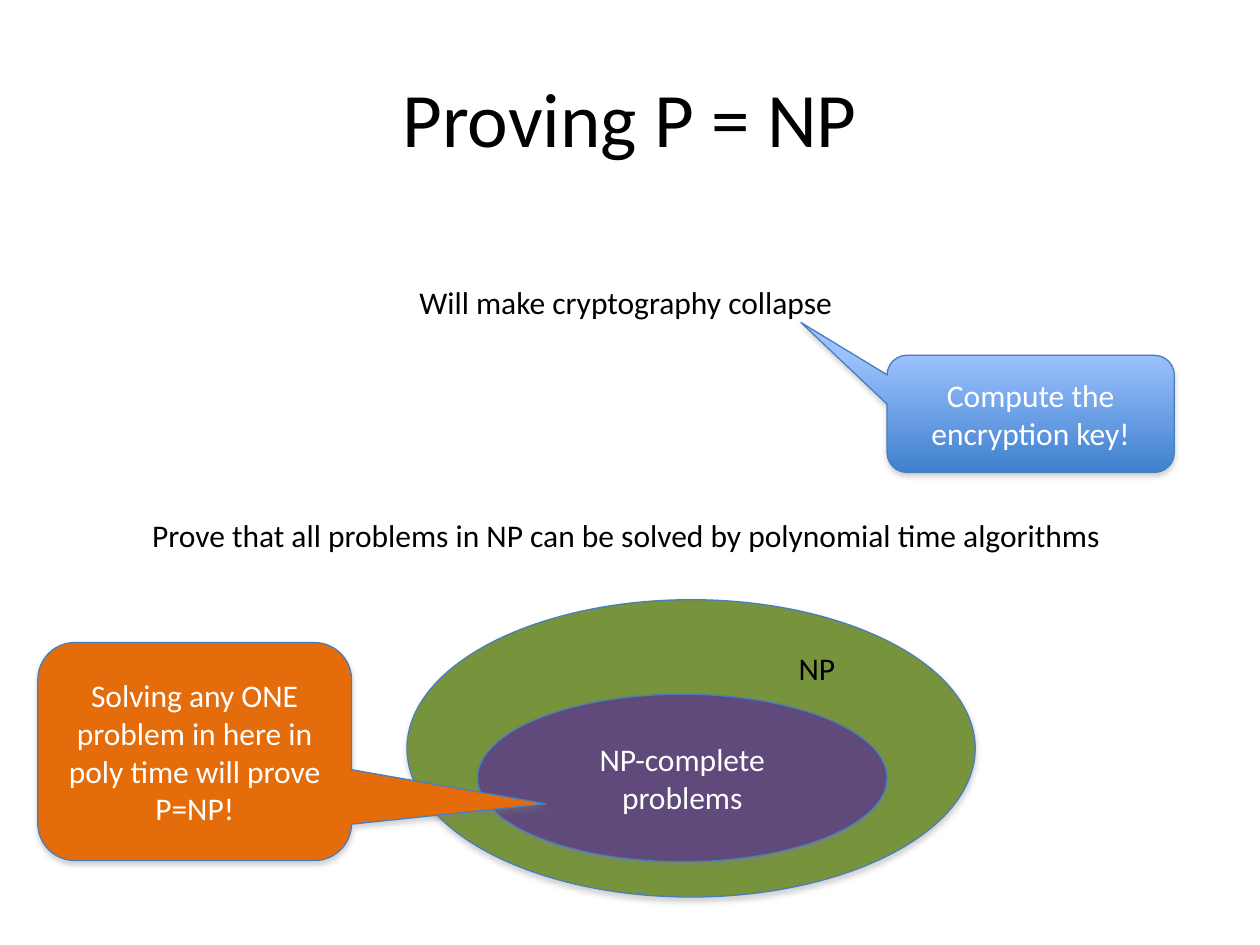
from lxml import etree
from pptx import Presentation
from pptx.dml.color import RGBColor
from pptx.enum.shapes import MSO_SHAPE
from pptx.enum.text import MSO_ANCHOR, MSO_AUTO_SIZE, PP_ALIGN
from pptx.oxml.ns import qn
from pptx.util import Inches, Pt

ELLIPSE = MSO_SHAPE.OVAL
CALLOUT = MSO_SHAPE.ROUNDED_RECTANGULAR_CALLOUT
MIDDLE = MSO_ANCHOR.MIDDLE
CENTER = PP_ALIGN.CENTER
FIT_SHAPE = MSO_AUTO_SIZE.SHAPE_TO_FIT_TEXT

FONT = "Calibri"
COLORS = {
    "text": "000000",
    "light": "FFFFFF",
    "outline": "4A7EBB",
    "shadow": "808080",
    "sky": "9BC1FF",
    "blue": "3F80CD",
    "np": "77933C",
    "np_complete": "604A7B",
    "orange": "E46C0A",
}


def rgb(name):
    return RGBColor.from_string(COLORS[name])


def write(frame, text, color, size=18):
    frame.text = text
    font = frame.paragraphs[0].runs[0].font
    font.name = FONT
    font.size = Pt(size)
    font.color.rgb = rgb(color)


def center(frame):
    frame.word_wrap = True
    frame.vertical_anchor = MIDDLE
    frame.paragraphs[0].alignment = CENTER


def add_title(shapes, text):
    title = shapes.add_textbox(Inches(0.5), Inches(0.3), Inches(9), Inches(1.25))
    write(title.text_frame, text, "text", 44)
    center(title.text_frame)


def add_label(shapes, text, left, top, width):
    label = shapes.add_textbox(Inches(left), Inches(top), Inches(width), Inches(0.4))
    label.text_frame.word_wrap = False
    label.text_frame.auto_size = FIT_SHAPE
    write(label.text_frame, text, "text")


def add_shadow(shape):
    shape.shadow.inherit = False
    effects = shape._element.spPr.find(qn("a:effectLst"))
    shadow = etree.SubElement(
        effects, qn("a:outerShdw"), blurRad=str(Pt(3.1)), dist=str(Pt(1.8)),
        dir=str(90 * 60000), rotWithShape="0")
    color = etree.SubElement(shadow, qn("a:srgbClr"), val=COLORS["shadow"])
    etree.SubElement(color, qn("a:alpha"), val="35000")


def add_figure(shapes, kind, box, fills, text=None, adjustments=()):
    figure = shapes.add_shape(kind, *map(Inches, box))
    for index, value in enumerate(adjustments):
        figure.adjustments[index] = value
    if len(fills) > 1:
        figure.fill.gradient()
        figure.fill.gradient_angle = 270
        for stop, name in zip(figure.fill.gradient_stops, fills):
            stop.color.rgb = rgb(name)
    else:
        figure.fill.solid()
        figure.fill.fore_color.rgb = rgb(fills[0])
    figure.line.color.rgb = rgb("outline")
    figure.line.width = Pt(0.75)
    add_shadow(figure)
    if text:
        write(figure.text_frame, text, "light")
        center(figure.text_frame)


def main():
    deck = Presentation()
    deck.slide_width, deck.slide_height = Inches(10), Inches(7.5)
    shapes = deck.slides.add_slide(deck.slide_layouts[6]).shapes

    add_title(shapes, "Proving P = NP")
    add_label(shapes, "Will make cryptography collapse", 3.23, 2.2, 3.51)
    add_figure(shapes, CALLOUT, (7.04, 2.82, 2.28, 0.93), ["sky", "blue"],
               "Compute the encryption key!", (-0.8, -0.78, 0.17))
    add_label(shapes, "Prove that all problems in NP can be solved by "
              "polynomial time algorithms", 1.11, 4.05, 7.8)

    np_set = shapes.add_group_shape().shapes
    add_figure(np_set, ELLIPSE, (3.23, 4.76, 4.51, 2.36), ["np"])
    add_label(np_set, "NP", 6.24, 5.1, 0.5)

    add_figure(shapes, ELLIPSE, (3.79, 5.51, 3.25, 1.33), ["np_complete"],
               "NP-complete problems")
    add_figure(shapes, CALLOUT, (0.3, 5.1, 2.49, 1.73), ["orange"],
               "Solving any ONE problem in here in poly time will prove P=NP!",
               (1.12, 0.24, 0.17))
    deck.save("out.pptx")


if __name__ == "__main__":
    main()
